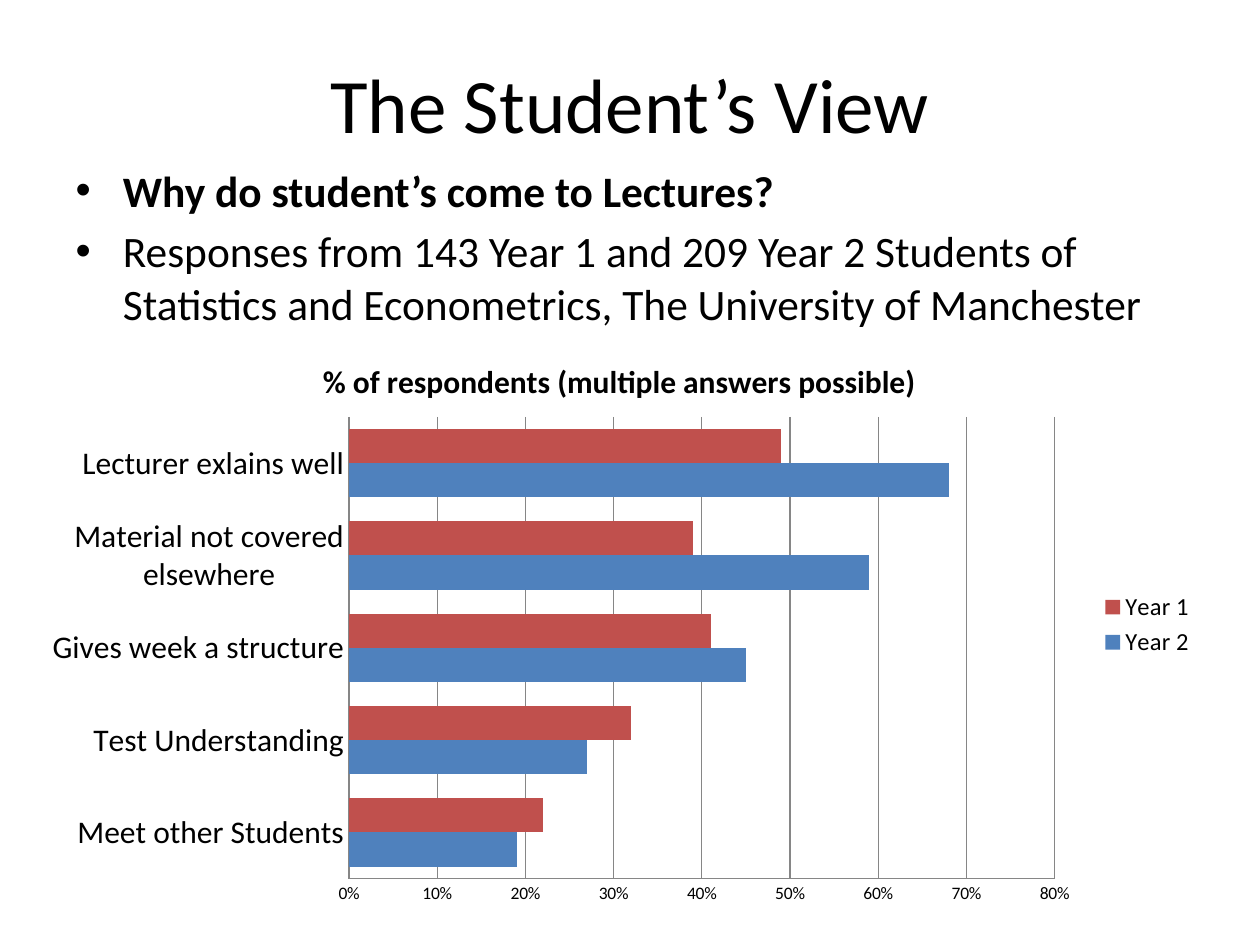
"""Build a slide on why students come to lectures, with a clustered bar chart."""
from lxml.etree import SubElement
from pptx import Presentation
from pptx.chart.data import CategoryChartData
from pptx.dml.color import RGBColor
from pptx.enum.chart import XL_CHART_TYPE, XL_LEGEND_POSITION, XL_TICK_MARK
from pptx.enum.text import MSO_ANCHOR, MSO_AUTO_SIZE, PP_ALIGN
from pptx.oxml.ns import qn
from pptx.util import Pt


def color(value):
    return RGBColor.from_string(value)


def format_font(font, size, bold=False):
    font.name = "Calibri"
    font.size = Pt(size)
    font.bold = bold
    font.color.rgb = color("000000")


presentation = Presentation()
presentation.slide_width, presentation.slide_height = Pt(720), Pt(540)
slide = presentation.slides.add_slide(presentation.slide_layouts[1])

title = slide.shapes.title
title.left, title.top, title.width, title.height = Pt(36), Pt(21.6), Pt(648), Pt(74)
title.text_frame.text = "The Student’s View"
title.text_frame.vertical_anchor = MSO_ANCHOR.MIDDLE
title.text_frame.paragraphs[0].alignment = PP_ALIGN.CENTER
format_font(title.text_frame.paragraphs[0].font, 44)

body = slide.placeholders[1]
body.left, body.top, body.width, body.height = Pt(36), Pt(90), Pt(648), Pt(90)
body.text_frame.text = (
    "Why do student’s come to Lectures?\n"
    "Responses from 143 Year 1 and 209 Year 2 Students of "
    "Statistics and Econometrics, The University of Manchester"
)
body.text_frame.auto_size = MSO_AUTO_SIZE.NONE
for paragraph, bold in zip(body.text_frame.paragraphs, (True, False)):
    format_font(paragraph.font, 24.8, bold)

chart_data = CategoryChartData(number_format="0%")
chart_data.categories = [
    "Meet other Students",
    "Test Understanding",
    "Gives week a structure",
    "Material not covered elsewhere",
    "Lecturer exlains well",
]
chart_data.add_series("Year 2", (0.19, 0.27, 0.45, 0.59, 0.68))
chart_data.add_series("Year 1", (0.22, 0.32, 0.41, 0.39, 0.49))
chart = slide.shapes.add_chart(
    XL_CHART_TYPE.BAR_CLUSTERED, Pt(18), Pt(192), Pt(672), Pt(330), chart_data
).chart
format_font(chart.font, 10)

chart.has_title = True
chart.chart_title.text_frame.text = "% of respondents (multiple answers possible)"
format_font(chart.chart_title.text_frame.paragraphs[0].font, 18, True)
chart.chart_title.include_in_layout = False

chart.has_legend = True
chart.legend.position = XL_LEGEND_POSITION.RIGHT
chart.legend.include_in_layout = False
format_font(chart.legend.font, 14)

plot = chart.plots[0]
plot.gap_width = 70
plot.vary_by_categories = False
for series, fill in zip(plot.series, ("4F81BD", "C0504D")):
    series.format.fill.solid()
    series.format.fill.fore_color.rgb = color(fill)

for axis, size in ((chart.category_axis, 18), (chart.value_axis, 10)):
    axis.major_tick_mark = axis.minor_tick_mark = XL_TICK_MARK.NONE
    axis.format.line.color.rgb = color("868686")
    axis.format.line.width = Pt(0.75)
    format_font(axis.tick_labels.font, size)

value_axis = chart.value_axis
value_axis.minimum_scale, value_axis.maximum_scale, value_axis.major_unit = 0, 0.8, 0.1
value_axis.tick_labels.number_format = "0%"
value_axis.tick_labels.number_format_is_linked = False
value_axis.has_major_gridlines = True
value_axis.major_gridlines.format.line.color.rgb = color("868686")
value_axis.major_gridlines.format.line.width = Pt(0.75)

plot_area = chart.element.find(f".//{qn('c:plotArea')}")
layout = plot_area.find(qn("c:layout"))
if layout is None:
    layout = SubElement(plot_area, qn("c:layout"))
    plot_area.insert(0, layout)
manual_layout = SubElement(layout, qn("c:manualLayout"))
for tag, value in (
    ("layoutTarget", "inner"), ("xMode", "edge"), ("yMode", "edge"),
    ("x", "0.27"), ("y", "0.14"), ("w", "0.6"), ("h", "0.8"),
):
    SubElement(manual_layout, qn(f"c:{tag}")).set("val", value)

presentation.save("out.pptx")
